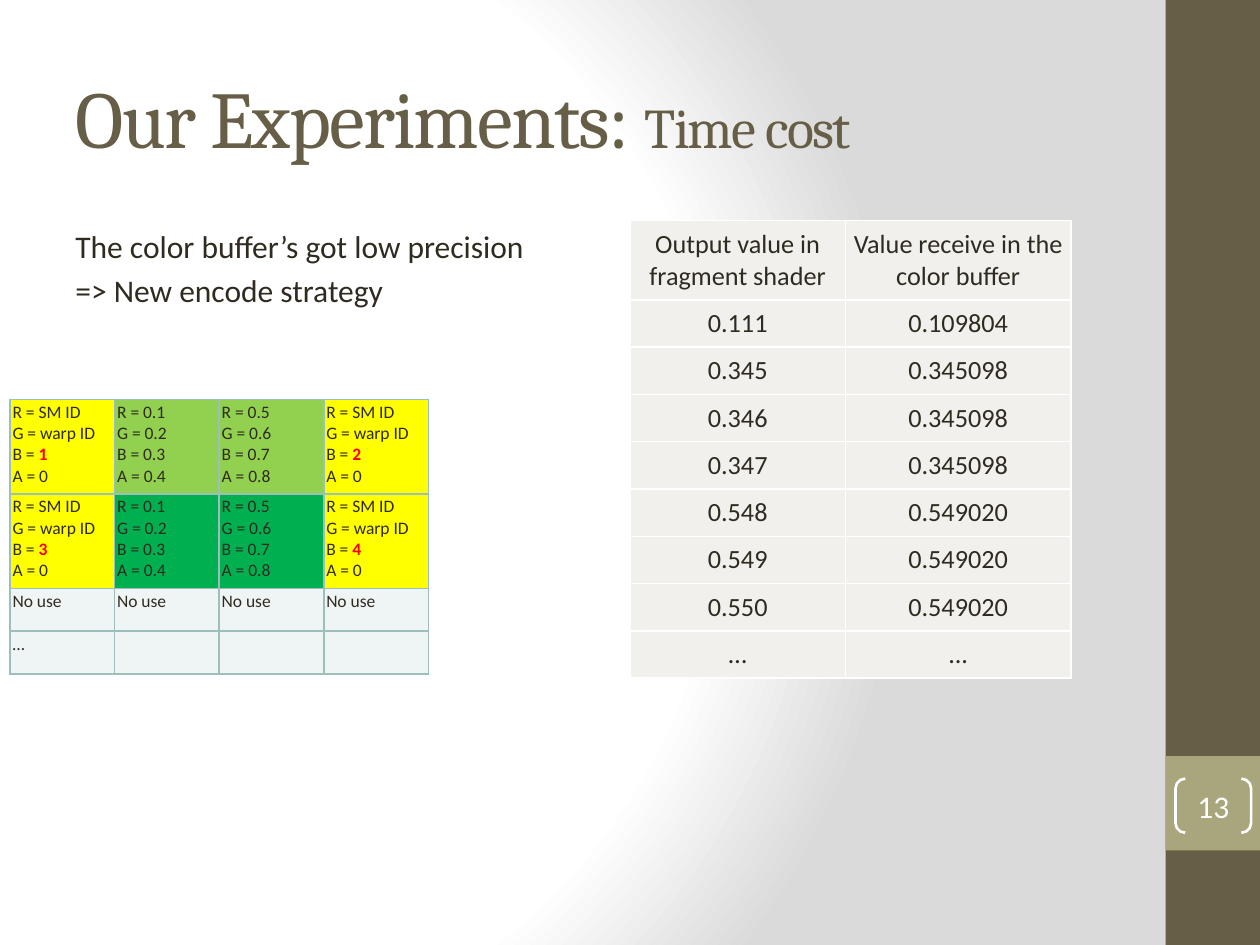
from pptx import Presentation
from pptx.dml.color import RGBColor
from pptx.enum.shapes import MSO_SHAPE
from pptx.enum.text import MSO_ANCHOR, MSO_AUTO_SIZE, PP_ALIGN
from pptx.oxml import parse_xml
from pptx.oxml.ns import nsdecls
from pptx.util import Inches, Pt

RECT, BRACKET = MSO_SHAPE.RECTANGLE, MSO_SHAPE.DOUBLE_BRACKET
MIDDLE, NO_FIT = MSO_ANCHOR.MIDDLE, MSO_AUTO_SIZE.NONE
LEFT, CENTER, JUSTIFY = PP_ALIGN.LEFT, PP_ALIGN.CENTER, PP_ALIGN.JUSTIFY

COLORS = {
    "brown": "675E47", "olive": "A9A57C", "ink": "2F2B20", "white": "FFFFFF",
    "gray": "DADADA", "red": "FF0000", "yellow": "FFFF00", "lime": "92D050",
    "green": "00B050", "mist": "EFF4F4", "teal": "9CBEBD", "cream": "F1F0EC",
}


def add_run(para, text, size, color="ink", face="Calibri", bold=False):
    run = para.add_run()
    run.text = text
    style = {"size": Pt(size), "name": face, "bold": bold}
    for key, value in style.items():
        setattr(run.font, key, value)
    run.font.color.rgb = RGBColor.from_string(COLORS[color])
    return run


def add_grid(box, widths, heights, rows, size, align, inset, border):
    """Each cell is (text, fill); text after a bar is bold red."""
    table = slide.shapes.add_table(len(rows), len(widths), *map(Inches, box)).table
    for col, width in zip(table.columns, widths):
        col.width = Inches(width)
    for row, height in zip(table.rows, heights):
        row.height = Inches(height)
    for r, row in enumerate(rows):
        for c, (text, fill) in enumerate(row):
            cell = table.cell(r, c)
            cell.fill.solid()
            cell.fill.fore_color.rgb = RGBColor.from_string(COLORS[fill])
            for side in ("left", "right", "top", "bottom"):
                setattr(cell, "margin_" + side, Inches(inset))
            for i, line in enumerate(text.split("\n")):
                frame = cell.text_frame
                para = frame.add_paragraph() if i else frame.paragraphs[0]
                para.alignment = align
                plain, bar, mark = line.partition("|")
                add_run(para, plain, size)
                if bar:
                    add_run(para, mark, size, "red", bold=True)
            # Cell borders come before the fill
            for i, side in enumerate("LRTB"):
                cell._tc.get_or_add_tcPr().insert(i, parse_xml(
                    f'<a:ln{side} {nsdecls("a")} w="12700"><a:solidFill>'
                    f'<a:srgbClr val="{COLORS[border]}"/></a:solidFill></a:ln{side}>'))


prs = Presentation()
prs.slide_width, prs.slide_height = Inches(10), Inches(7.5)
slide = prs.slides.add_slide(prs.slide_layouts[5])

# Background gradient
stops = "".join(
    f'<a:gs pos="{pos * 1000}"><a:srgbClr val="{COLORS[name]}"/></a:gs>'
    for pos, name in ((0, "white"), (75, "white"), (100, "gray")))
slide.element.cSld.insert(0, parse_xml(
    f'<p:bg {nsdecls("p", "a")}><p:bgPr><a:gradFill rotWithShape="1">'
    f'<a:gsLst>{stops}</a:gsLst><a:path path="circle">'
    '<a:fillToRect l="20000" t="50000" r="100000" b="50000"/></a:path>'
    '</a:gradFill><a:effectLst/></p:bgPr></p:bg>'))

# Side band
for top, height, color in ((0, 7.5, "brown"), (6, 0.75, "olive")):
    band = slide.shapes.add_shape(
        RECT, Inches(9.25), Inches(top), Inches(0.75), Inches(height))
    band.shadow.inherit = False
    band.fill.solid()
    band.fill.fore_color.rgb = RGBColor.from_string(COLORS[color])
    band.line.fill.background()

# Title
title = slide.shapes.title
title.left, title.top = Inches(0.5), Inches(0.3)
title.width, title.height = Inches(8.33), Inches(1.25)
title.text_frame.auto_size = NO_FIT
title.text_frame.vertical_anchor = MIDDLE
para = title.text_frame.paragraphs[0]
para.alignment = LEFT
for text, size in (("Our Experiments: ", 46), ("Time cost", 32)):
    run = add_run(para, text, size, "brown", "Cambria")
    run.font._element.set("spc", "-100")

# Encoding table
tags = [(f"R = SM ID\nG = warp ID\nB = |{n}\nA = 0", "yellow") for n in range(1, 5)]
low = "R = 0.1\nG = 0.2\nB = 0.3\nA = 0.4"
high = "R = 0.5\nG = 0.6\nB = 0.7\nA = 0.8"
codes = [
    [tags[0], (low, "lime"), (high, "lime"), tags[1]],
    [tags[2], (low, "green"), (high, "green"), tags[3]],
    [("No use", "mist")] * 4,
    [("…", "mist")] + [("", "mist")] * 3,
]
add_grid((0.08, 3.17, 3.31, 2.19), [0.83] * 4, [0.75, 0.75, 0.34, 0.34],
         codes, 10, JUSTIFY, 0.02, "teal")

# Precision table
pairs = [
    ("Output value in fragment shader", "Value receive in the color buffer"),
    ("0.111", "0.109804"), ("0.345", "0.345098"), ("0.346", "0.345098"),
    ("0.347", "0.345098"), ("0.548", "0.549020"), ("0.549", "0.549020"),
    ("0.550", "0.549020"), ("…", "..."),
]
values = [[(text, "cream") for text in pair] for pair in pairs]
add_grid((5, 1.75, 3.5, 3.52), [1.71, 1.79], [0.62] + [0.37] * 8,
         values, 15, CENTER, 0.06, "white")

# Body text
body = slide.shapes.add_textbox(
    Inches(0.5), Inches(1.75), Inches(8.33), Inches(5.25)).text_frame
body.word_wrap = True
lines = ("The color buffer’s got low precision", "=> New encode strategy")
for i, text in enumerate(lines):
    para = body.add_paragraph() if i else body.paragraphs[0]
    para.space_before = Pt(3.6)
    add_run(para, text, 18)

# Page number
page = slide.shapes.add_shape(
    BRACKET, Inches(9.33), Inches(6.18), Inches(0.6), Inches(0.43))
page.shadow.inherit = False
page.adjustments[0] = 0.18
page.fill.background()
page.line.color.rgb = RGBColor.from_string(COLORS["white"])
page.line.width = Pt(1.5)
frame = page.text_frame
for side in ("left", "right", "top", "bottom"):
    setattr(frame, "margin_" + side, 0)
frame.vertical_anchor = MIDDLE
frame.paragraphs[0].alignment = CENTER
add_run(frame.paragraphs[0], "13", 18, "white")

prs.save("out.pptx")
